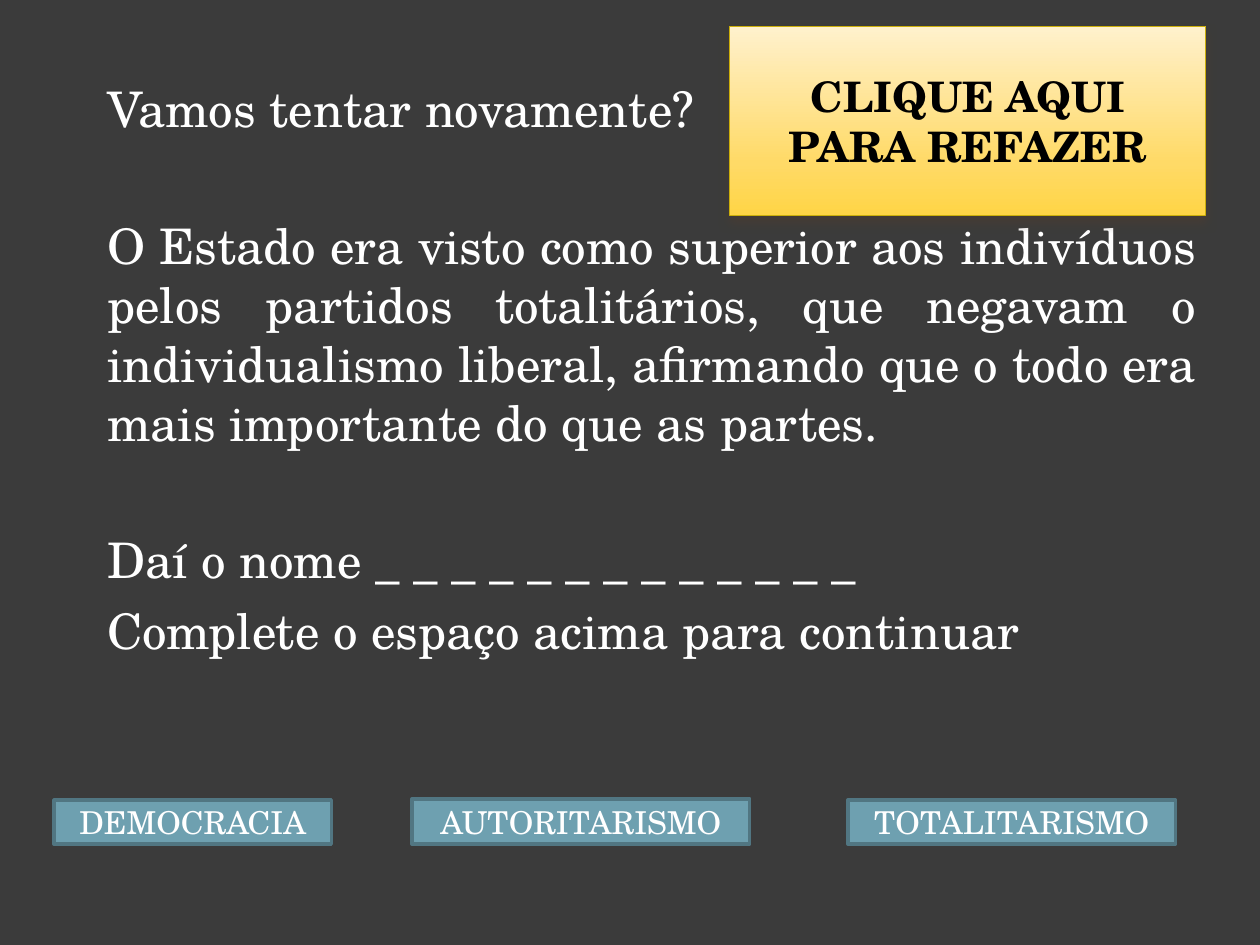
from copy import deepcopy

from lxml.etree import SubElement
from pptx import Presentation
from pptx.dml.color import RGBColor
from pptx.enum.shapes import MSO_SHAPE
from pptx.enum.text import MSO_ANCHOR, MSO_AUTO_SIZE, PP_ALIGN
from pptx.oxml.ns import qn
from pptx.util import Inches, Pt

FONT = "TeX Gyre Schola"
WHITE = "FFFFFF"
BODY = [
    ("Vamos tentar novamente?", 6.5),
    ("O Estado era visto como superior aos indivíduos pelos partidos "
     "totalitários, que negavam o individualismo liberal, afirmando que "
     "o todo era mais importante do que as partes.", 45),
    ("Daí o nome _ _ _ _ _ _ _ _ _ _ _ _ _", 45),
    ("Complete o espaço acima para continuar", 6.5),
]
ANSWERS = [
    ("DEMOCRACIA", 0.43, 6.35, 2.2, 0.35),
    ("AUTORITARISMO", 3.27, 6.34, 2.68, 0.36),
    ("TOTALITARISMO", 6.73, 6.35, 2.6, 0.35),
]
GOLD_STOPS = [(0, "FFF1CD"), (0.72, "FFDA67"), (1, "FFD546")]


def rgb(color):
    """Turn a hex string into a colour."""
    return RGBColor.from_string(color)


def set_font(paragraph, size, color, bold=False):
    """Set the font of a whole paragraph."""
    font = paragraph.font
    font.name, font.size, font.bold = FONT, Pt(size), bold
    font.color.rgb = rgb(color)


def add_body(slide):
    """Fill the body placeholder with justified, unbulleted paragraphs."""
    body = slide.placeholders[1]
    body.left, body.top = Inches(0.75), Inches(0.52)
    body.width, body.height = Inches(8.84), Inches(5.35)
    frame = body.text_frame
    frame.auto_size = MSO_AUTO_SIZE.NONE
    frame.vertical_anchor = MSO_ANCHOR.TOP
    frame.margin_left = frame.margin_right = Inches(0.1)
    frame.margin_top = frame.margin_bottom = Inches(0.1)
    frame.text = "\n".join(text for text, _ in BODY)
    for paragraph, (_, gap) in zip(frame.paragraphs, BODY):
        paragraph.alignment = PP_ALIGN.JUSTIFY
        paragraph.space_before = Pt(gap)
        set_font(paragraph, 28, WHITE)
        properties = paragraph._p.get_or_add_pPr()
        properties.set("marL", "0")
        properties.set("indent", "0")
        bullet = SubElement(properties, qn("a:buNone"))
        properties.find(qn("a:defRPr")).addprevious(bullet)


def add_button(slide, text, left, top, width, height, line, line_width,
               size, color=WHITE, bold=False):
    """Add a rectangle with centred text."""
    button = slide.shapes.add_shape(
        MSO_SHAPE.RECTANGLE, Inches(left), Inches(top),
        Inches(width), Inches(height))
    button.shadow.inherit = False
    button.line.color.rgb = rgb(line)
    button.line.width = Pt(line_width)
    frame = button.text_frame
    frame.text = text
    frame.word_wrap = True
    frame.vertical_anchor = MSO_ANCHOR.MIDDLE
    paragraph = frame.paragraphs[0]
    paragraph.alignment = PP_ALIGN.CENTER
    set_font(paragraph, size, color, bold)
    return button


def fill_gradient(shape, stops):
    """Fill a shape with a gradient that runs downwards."""
    shape.fill.gradient()
    shape.fill.gradient_angle = 270
    stop_list = shape._element.spPr.find(qn("a:gradFill")).find(qn("a:gsLst"))
    while len(stop_list) < len(stops):
        stop_list.append(deepcopy(stop_list[0]))
    for stop, (position, color) in zip(shape.fill.gradient_stops, stops):
        stop.position = position
        stop.color.rgb = rgb(color)


def add_shadow(shape, color, opacity, blur, distance):
    """Give a shape a soft shadow below it."""
    effects = shape._element.spPr.find(qn("a:effectLst"))
    shadow = SubElement(effects, qn("a:outerShdw"), blurRad=str(Pt(blur)),
                        dist=str(Pt(distance)), dir="5400000",
                        rotWithShape="0")
    tone = SubElement(shadow, qn("a:srgbClr"), val=color)
    SubElement(tone, qn("a:alpha"), val=str(opacity * 1000))


def main():
    """Build the quiz retry slide."""
    presentation = Presentation()
    presentation.slide_width = Inches(10)
    presentation.slide_height = Inches(7.5)
    slide = presentation.slides.add_slide(presentation.slide_layouts[1])
    title = slide.shapes.title._element
    title.getparent().remove(title)
    background = slide.background.fill
    background.solid()
    background.fore_color.rgb = rgb("3B3B3B")

    add_body(slide)
    for text, *box in ANSWERS:
        answer = add_button(slide, text, *box, "517682", 2, 18)
        answer.fill.solid()
        answer.fill.fore_color.rgb = rgb("6EA0B0")
    retry = add_button(slide, "CLIQUE AQUI PARA REFAZER", 5.79, 0.21, 3.78,
                       1.5, "CCAF0A", 0.79, 24, "000000", True)
    fill_gradient(retry, GOLD_STOPS)
    add_shadow(retry, "4E3B30", 60, 6, 4)
    presentation.save("out.pptx")


if __name__ == "__main__":
    main()
